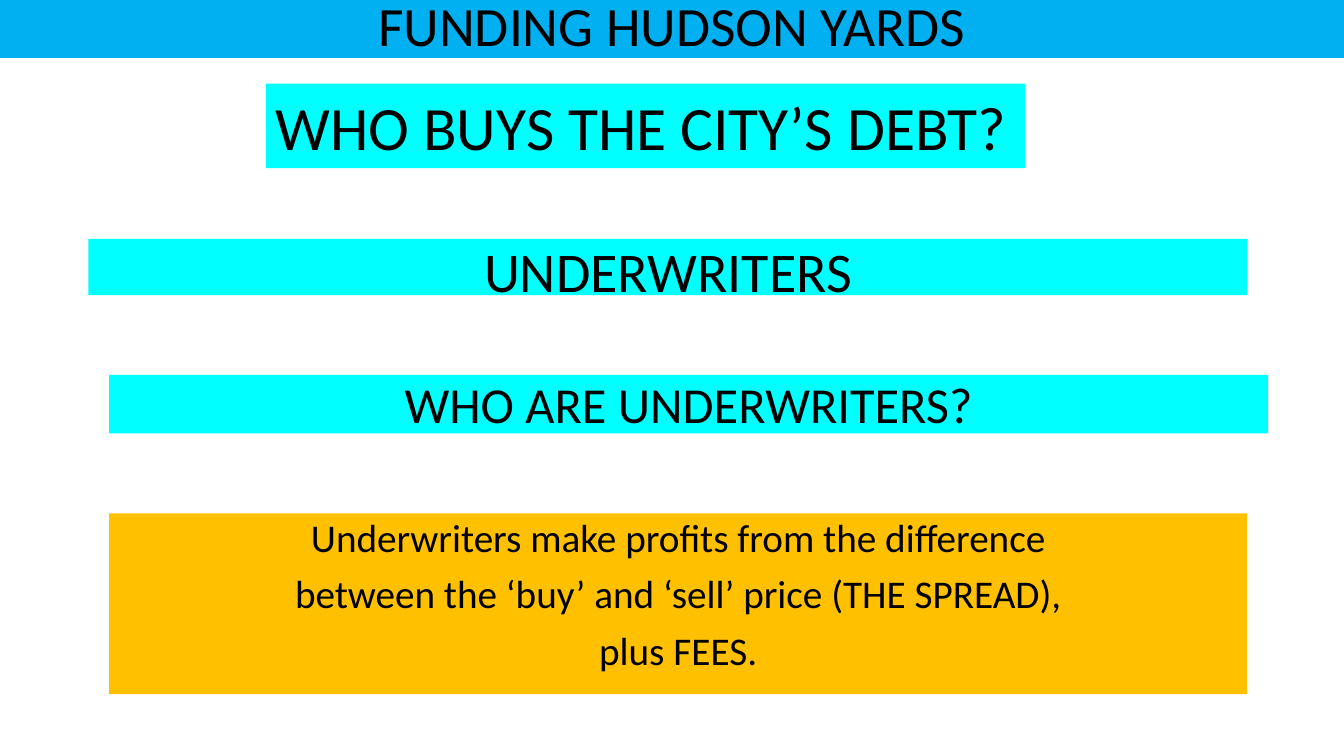
"""Build the Hudson Yards funding slide about underwriters."""
from pptx import Presentation
from pptx.dml.color import RGBColor
from pptx.enum.shapes import MSO_SHAPE
from pptx.enum.text import MSO_ANCHOR, PP_ALIGN
from pptx.util import Cm, Pt

COLORS = {"blue": "00B0F0", "cyan": "00FFFF", "amber": "FFC000", "text": "000000"}
CENTER, LEFT = PP_ALIGN.CENTER, PP_ALIGN.LEFT
TOP, MIDDLE = MSO_ANCHOR.TOP, MSO_ANCHOR.MIDDLE

presentation = Presentation()
presentation.slide_width = Cm(33.87)
presentation.slide_height = Cm(19.05)
slide = presentation.slides.add_slide(presentation.slide_layouts[6])

profit_lines = [
    "Underwriters make profits from the difference",
    "between the ‘buy’ and ‘sell’ price (THE SPREAD),",
    "plus FEES.",
]
banners = [
    ((0, 0, 33.87, 1.46), "blue", 39.6, CENTER, MIDDLE, 0.9, 0,
     ["FUNDING HUDSON YARDS"]),
    ((2.75, 12.94, 28.68, 4.55), "amber", 28, CENTER, TOP, 0.9, 10,
     profit_lines),
    ((2.23, 6.02, 29.21, 1.42), "cyan", 40, CENTER, TOP, 0.9, 10,
     ["UNDERWRITERS"]),
    ((6.7, 2.11, 19.13, 2.13), "cyan", 44, LEFT, TOP, 1.0, 0,
     ["WHO BUYS THE CITY’S DEBT?"]),
    ((2.75, 9.45, 29.21, 1.47), "cyan", 36, CENTER, TOP, 0.9, 10,
     ["WHO ARE UNDERWRITERS?"]),
]

for box, fill, size, alignment, anchor, spacing, space_before, lines in banners:
    shape = slide.shapes.add_shape(MSO_SHAPE.RECTANGLE, *map(Cm, box))
    shape.shadow.inherit = False
    shape.fill.solid()
    shape.fill.fore_color.rgb = RGBColor.from_string(COLORS[fill])
    shape.line.fill.background()
    frame = shape.text_frame
    frame.word_wrap = True
    frame.vertical_anchor = anchor
    frame.text = "\n".join(lines)
    for paragraph in frame.paragraphs:
        paragraph.alignment = alignment
        paragraph.line_spacing = spacing
        paragraph.space_before = Pt(space_before)
        paragraph.font.name = "Calibri"
        paragraph.font.size = Pt(size)
        paragraph.font.color.rgb = RGBColor.from_string(COLORS["text"])

presentation.save("out.pptx")
